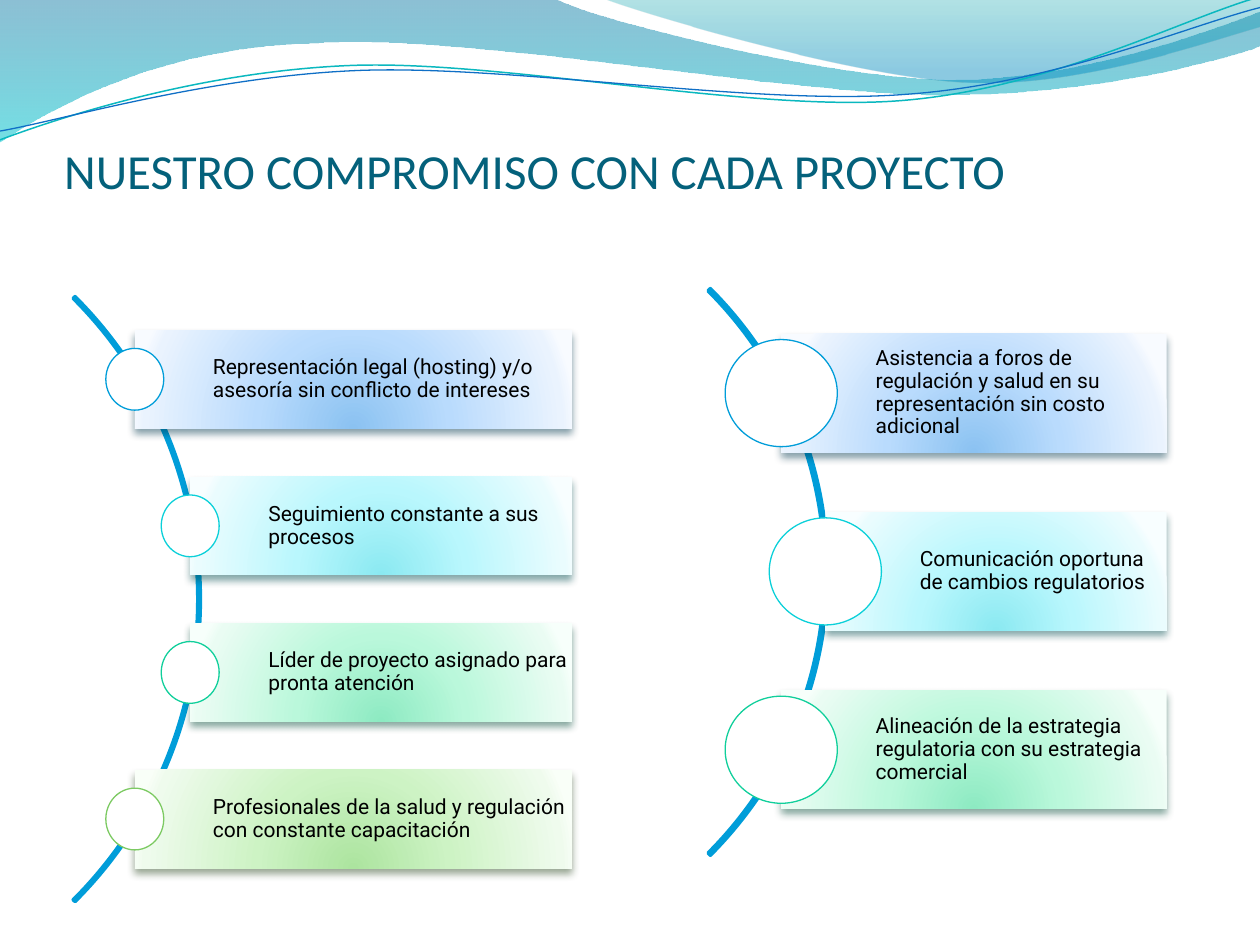
from dataclasses import dataclass
from math import cos, radians, sin

from lxml import etree
from pptx import Presentation
from pptx.dml.color import RGBColor
from pptx.enum.shapes import MSO_SHAPE
from pptx.enum.text import MSO_ANCHOR, PP_ALIGN
from pptx.oxml.ns import qn
from pptx.util import Inches, Pt

RECT, OVAL, ARC = MSO_SHAPE.RECTANGLE, MSO_SHAPE.OVAL, MSO_SHAPE.BLOCK_ARC
MIDDLE, BOTTOM, LEFT = MSO_ANCHOR.MIDDLE, MSO_ANCHOR.BOTTOM, PP_ALIGN.LEFT

COLORS = {
    "title": "04617B", "text": "000000", "white": "FFFFFF",
    "wave_top": "0074A1", "wave_bottom": "00C6CF",
    "crest_top": "00A1A9", "crest_bottom": "008BBF",
    "teal_line": "0AB8BF", "blue_line": "0F6FC6",
    "blue": "009DD9", "cyan": "0BD0D9", "green": "10CF9B", "lime": "7CCA62",
    "blue_shadow": "00374C", "cyan_shadow": "024B4E",
    "green_shadow": "044A37", "lime_shadow": "2B4821",
}
# Bar gradients, from the glowing lower centre outwards
GLOWS = {
    "blue": ("8BC2F1", "B9DBFD", "EAF3FE", "F8FBFF"),
    "cyan": ("8BE9F1", "B9F7FD", "EAFCFE", "F8FEFF"),
    "green": ("8DEAC2", "BAF8DB", "EAFCF3", "F7FFFB"),
    "lime": ("ACE49F", "CDF3C4", "EFFBED", "F9FFF8"),
}
GLOW_STOPS = (0, 43, 93, 100)
SWOOSH_TILT = -2.7
SWOOSH_CENTER = (4.99, 0.58)


@dataclass
class Commitment:
    text: str
    accent: str
    left: float


@dataclass
class CurvedList:
    arc: tuple  # left, top, diameter, thickness ratio
    first_top: float
    last_top: float
    right: float
    bar_height: float
    dot: tuple  # width, height
    indent: float
    items: list


LISTS = [
    CurvedList((-5.2, 1.36, 6.79, 0.003), 2.62, 6.11, 4.54, 0.78, (0.46, 0.49), 0.62, [
        Commitment("Representación legal (hosting) y/o asesoría sin conflicto de intereses",
                   "blue", 1.07),
        Commitment("Seguimiento constante a sus procesos", "cyan", 1.51),
        Commitment("Líder de proyecto asignado para pronta atención", "green", 1.51),
        Commitment("Profesionales de la salud y regulación con constante capacitación",
                   "lime", 1.07),
    ]),
    CurvedList((0.21, 1.36, 6.36, 0.004), 2.65, 5.48, 9.26, 0.94, (0.89, 0.85), 0.75, [
        Commitment("Asistencia a foros de regulación y salud en su representación "
                   "sin costo adicional", "blue", 6.2),
        Commitment("Comunicación oportuna de cambios regulatorios", "cyan", 6.55),
        Commitment("Alineación de la estrategia regulatoria con su estrategia comercial",
                   "green", 6.2),
    ]),
]


def rgb(name: str) -> RGBColor:
    return RGBColor.from_string(COLORS[name])


def set_all(target, values: dict) -> None:
    for name, value in values.items():
        setattr(target, name, value)


def add_color(parent, value: str, opacity: int) -> None:
    color = etree.SubElement(parent, qn("a:srgbClr"), val=value)
    if opacity < 100:
        etree.SubElement(color, qn("a:alpha"), val=str(opacity * 1000))


def set_gradient(shape, stops: list, radial: bool = False) -> None:
    """Fill with (position, hex, opacity) stops, downwards or from below the centre."""
    shape.fill.background()
    no_fill = shape._element.spPr.find(qn("a:noFill"))
    gradient = etree.Element(qn("a:gradFill"), rotWithShape="1")
    stop_list = etree.SubElement(gradient, qn("a:gsLst"))
    for position, value, opacity in stops:
        stop = etree.SubElement(stop_list, qn("a:gs"), pos=str(position * 1000))
        add_color(stop, value, opacity)
    if radial:
        focus = etree.SubElement(gradient, qn("a:path"), path="circle")
        etree.SubElement(focus, qn("a:fillToRect"),
                         l="50000", t="130000", r="50000", b="-30000")
    else:
        etree.SubElement(gradient, qn("a:lin"), ang="5400000", scaled="0")
    no_fill.getparent().replace(no_fill, gradient)


def set_line(shape, color: str, width: float) -> None:
    shape.line.color.rgb = rgb(color)
    shape.line.width = Pt(width)


def add_drop_shadow(shape, color: str) -> None:
    effects = shape._element.spPr.find(qn("a:effectLst"))
    shadow = etree.SubElement(effects, qn("a:outerShdw"), blurRad=str(Pt(4.5)),
                              dist=str(Pt(3)), dir="5400000", rotWithShape="0")
    add_color(shadow, COLORS[color], 48)


def add_plain(slide, kind, left: float, top: float, width: float, height: float):
    shape = slide.shapes.add_shape(kind, *map(Inches, (left, top, width, height)))
    shape.shadow.inherit = False
    return shape


def add_text(slide, box: tuple, text: str, font: dict, color: str, frame: dict,
             spacing: float) -> None:
    label = slide.shapes.add_textbox(*map(Inches, box))
    set_all(label.text_frame, {"word_wrap": True, **frame})
    paragraph = label.text_frame.paragraphs[0]
    set_all(paragraph, {"alignment": LEFT, "line_spacing": spacing})
    run = paragraph.add_run()
    run.text = text
    set_all(run.font, font)
    run.font.color.rgb = rgb(color)


def turn(point: tuple, degrees: float) -> tuple:
    """Turn a point clockwise about the centre of the swooshes."""
    (x, y), (cx, cy), angle = point, SWOOSH_CENTER, radians(degrees)
    dx, dy = x - cx, y - cy
    return cx + dx * cos(angle) - dy * sin(angle), cy + dx * sin(angle) + dy * cos(angle)


def add_wave(slide, start: tuple, segments: list, closed: bool, tilt: float = 0):
    """Trace segments: 2 numbers make a line, 6 make a cubic curve."""
    points = [start]
    for segment in segments:
        points += zip(segment[::2], segment[1::2])
    corners = [tuple(map(Inches, turn(point, -tilt))) for point in points]
    builder = slide.shapes.build_freeform(*corners[0])
    builder.add_line_segments(corners[1:], close=closed)
    wave = builder.convert_to_shape()
    wave.shadow.inherit = False
    wave.rotation = tilt % 360
    # Merge each three points of a curve into one cubic segment
    steps = iter(list(wave._element.iter(qn("a:lnTo"))))
    for segment in segments:
        first, *others = [next(steps) for _ in segment[::2]]
        if others:
            curve = etree.Element(qn("a:cubicBezTo"))
            first.addprevious(curve)
            for step in (first, *others):
                curve.append(step[0])
                step.getparent().remove(step)
    return wave


def add_header(slide) -> None:
    # Translucent waves
    waves = [
        ((0, 0), [(4.4, -0.01), (4.76, 0.17, 6.64, 0.63, 7.58, 0.63),
                  (8.53, 0.63, 9.58, 0.26, 10, 0.09), (10.01, 0.36),
                  (9.83, 0.44, 8.7, 0.76, 7.46, 0.75), (6.22, 0.75, 3.82, 0.28, 2.57, 0.34),
                  (1.29, 0.36, 0.46, 0.83, -0.01, 1.13), (0, 0)],
         [(0, COLORS["wave_top"], 45), (100, COLORS["wave_bottom"], 55)]),
        ((4.79, -0.01), [(5.09, 0.11, 6.82, 0.62, 7.69, 0.65),
                         (8.56, 0.69, 9.61, 0.32, 10, 0.21), (10, 0), (4.79, -0.01)],
         [(0, COLORS["crest_top"], 30), (80, COLORS["crest_bottom"], 45)]),
    ]
    for start, segments, stops in waves:
        wave = add_wave(slide, start, segments, True)
        set_gradient(wave, stops)
        wave.line.fill.background()
    # Thin swooshes
    swooshes = [
        ((0, 1.11), [(0.48, 0.93, 1.58, 0.57, 2.77, 0.52), (3.95, 0.47, 5.93, 0.89, 7.13, 0.8),
                     (8.33, 0.71, 9.38, 0.15, 9.98, -0.02)], "teal_line", 0.85),
        ((0, 1.04), [(0.47, 0.96, 1.64, 0.61, 2.83, 0.56), (4.03, 0.51, 5.97, 0.84, 7.17, 0.75),
                     (8.36, 0.67, 9.41, 0.21, 10, 0.06)], "blue_line", 0.75),
    ]
    for start, segments, color, width in swooshes:
        swoosh = add_wave(slide, start, segments, False, SWOOSH_TILT)
        swoosh.fill.background()
        set_line(swoosh, color, width)


def add_curved_list(slide, group: CurvedList) -> None:
    left, top, diameter, thickness = group.arc
    arc = add_plain(slide, ARC, left, top, diameter, diameter)
    for index, value in enumerate((189, 27, thickness)):
        arc.adjustments[index] = value
    arc.fill.background()
    set_line(arc, "blue", 2)

    pitch = (group.last_top - group.first_top) / (len(group.items) - 1)
    dot_width, dot_height = group.dot
    margin = Inches(0.03)
    frame = {"vertical_anchor": MIDDLE, "margin_left": Inches(group.indent),
             "margin_top": margin, "margin_right": margin, "margin_bottom": margin}
    for row, item in enumerate(group.items):
        bar_top = group.first_top + row * pitch
        box = (item.left, bar_top, group.right - item.left, group.bar_height)
        bar = add_plain(slide, RECT, *box)
        set_gradient(bar, [(p, c, 100) for p, c in zip(GLOW_STOPS, GLOWS[item.accent])], True)
        bar.line.fill.background()
        add_drop_shadow(bar, item.accent + "_shadow")
        add_text(slide, box, item.text, {"name": "Roboto", "size": Pt(12)}, "text", frame, 0.9)
        # Dot centred on the bar's left edge
        dot = add_plain(slide, OVAL, item.left - dot_width / 2,
                        bar_top + (group.bar_height - dot_height) / 2, dot_width, dot_height)
        dot.fill.solid()
        dot.fill.fore_color.rgb = rgb("white")
        set_line(dot, item.accent, 0.75)


def main() -> None:
    deck = Presentation()
    set_all(deck, {"slide_width": Inches(10), "slide_height": Inches(7.5)})
    slide = deck.slides.add_slide(deck.slide_layouts[6])
    add_header(slide)
    first_list, second_list = LISTS
    add_curved_list(slide, first_list)
    add_text(slide, (0.51, 0.33, 9, 1.25), "NUESTRO COMPROMISO CON CADA PROYECTO",
             {"name": "Calibri", "size": Pt(28)}, "title",
             {"vertical_anchor": BOTTOM, "margin_left": 0, "margin_top": Inches(0.05),
              "margin_right": 0, "margin_bottom": 0}, 1.0)
    add_curved_list(slide, second_list)
    deck.save("out.pptx")


if __name__ == "__main__":
    main()
